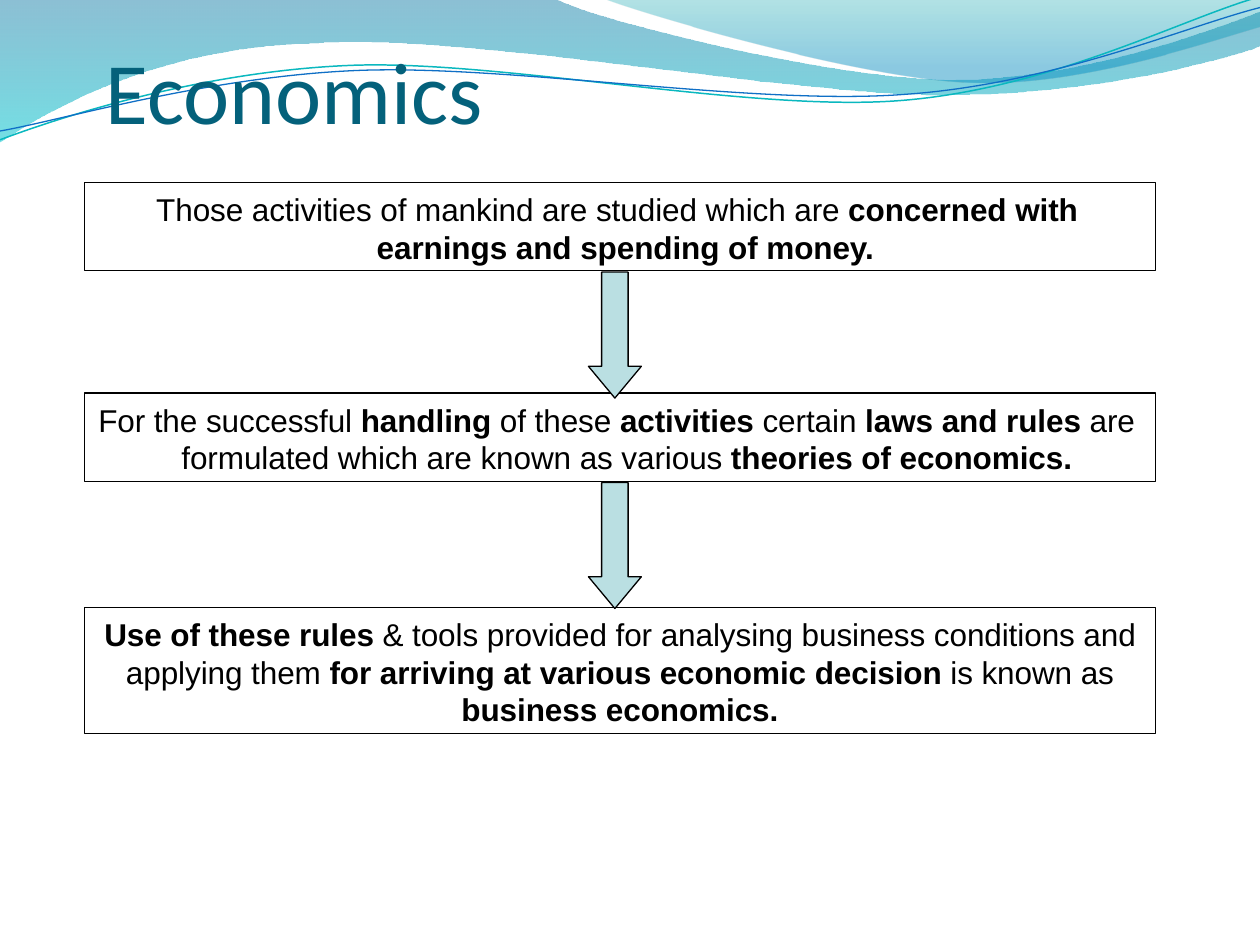
from lxml import etree
from pptx import Presentation
from pptx import util as u
from pptx.dml.color import RGBColor
from pptx.enum import shapes, text
from pptx.oxml.ns import qn

WIDTH, HEIGHT = 10, 7.5
TITLE = "Economics"
TITLE_PLACE = (0.84, 0.27, 5.09, 0.86)
BOX_LEFT, BOX_WIDTH = 0.67, 8.5
ARROW_LEFT, ARROW_WIDTH, ARROW_HEIGHT, ARROW_GAP = 4.67, 0.42, 1, 0.01

# Bold words stand between asterisks; first and hang are line starts from the box edge.
STEPS = [
    dict(top=1.455, height=0.7, first=0.57, hang=2.32, align="LEFT",
         words="Those activities of mankind are studied which are "
               "*concerned with earnings and spending of money.*"),
    dict(top=3.12, height=0.7, first=0.11, hang=0.77, align="LEFT",
         words="For the successful *handling* of these *activities* certain "
               "*laws and rules* are formulated which are known as various "
               "*theories of economics.*"),
    dict(top=4.82, height=1, first=0, hang=0, align="CENTER",
         words="*Use of these rules* & tools provided for analysing business "
               "conditions and applying them *for arriving at various economic "
               "decision* is known as *business economics.*"),
]
STEPS[0]["top"] = 1.45

# A wave is a start point, then line ends (x, y) or cubic curves (two handles and an end).
# A gradient stop is position, colour, opacity in percent.
WAVES = [
    dict(points=[(0, 0), (4.4, -0.01), (4.76, 0.17, 6.64, 0.63, 7.58, 0.63),
                 (8.53, 0.63, 9.58, 0.26, 10, 0.09), (10.01, 0.36),
                 (9.83, 0.44, 8.7, 0.76, 7.46, 0.75),
                 (6.22, 0.75, 3.82, 0.28, 2.57, 0.34),
                 (1.29, 0.36, 0.46, 0.83, -0.01, 1.13)],
         stops=[(0, "0074A1", 45), (1, "00C6CF", 55)]),
    dict(points=[(4.79, -0.01), (5.09, 0.11, 6.82, 0.62, 7.69, 0.65),
                 (8.56, 0.69, 9.61, 0.32, 10, 0.21), (10, 0)],
         stops=[(0, "00A1A9", 30), (0.8, "008BBF", 45)]),
    dict(points=[(0, 1.11), (0.48, 0.93, 1.58, 0.57, 2.77, 0.52),
                 (3.95, 0.47, 5.93, 0.89, 7.13, 0.8),
                 (8.33, 0.71, 9.38, 0.15, 9.98, -0.02)],
         line=("0AB8BF", 0.85)),
    dict(points=[(0, 1.04), (0.47, 0.96, 1.64, 0.61, 2.83, 0.56),
                 (4.03, 0.51, 5.97, 0.84, 7.17, 0.75),
                 (8.36, 0.67, 9.41, 0.21, 10, 0.06)],
         line=("0F6FC6", 0.75)),
]


def color(value):
    return RGBColor.from_string(value)


def assign(target, **values):
    for name, value in values.items():
        setattr(target, name, value)


def paint(shape, fill=None, line=None):
    """Set a solid fill and a (colour, points) line; None means no paint."""
    shape.shadow.inherit = False
    if fill:
        shape.fill.solid()
        shape.fill.fore_color.rgb = color(fill)
    else:
        shape.fill.background()
    if line:
        shape.line.color.rgb = color(line[0])
        shape.line.width = u.Pt(line[1])
    else:
        shape.line.fill.background()


def paint_gradient(shape, stops):
    shape.fill.gradient()
    shape.fill.gradient_angle = 270
    for stop, (position, value, _) in zip(shape.fill.gradient_stops, stops):
        stop.position = position
        stop.color.rgb = color(value)
    tones = shape._element.spPr.find(qn("a:gradFill")).iter(qn("a:srgbClr"))
    for tone, (_, _, opacity) in zip(tones, stops):
        etree.SubElement(tone, qn("a:alpha")).set("val", str(opacity * 1000))


def bend(wave, points):
    """Turn the straight segments that have handles into cubic curves."""
    segments = list(wave._element.spPr.iter(qn("a:lnTo")))
    for segment, part in zip(segments, points[1:]):
        if len(part) == 6:
            segment.tag = qn("a:cubicBezTo")
            for index in (0, 2):
                handle = etree.Element(qn("a:pt"))
                handle.set("x", str(u.Inches(part[index]) - wave.left))
                handle.set("y", str(u.Inches(part[index + 1]) - wave.top))
                segment.insert(index // 2, handle)


def add_wave(page, points, stops=None, line=None):
    ends = [tuple(map(u.Inches, part[-2:])) for part in points]
    builder = page.shapes.build_freeform(*ends[0], scale=1)
    builder.add_line_segments(ends[1:], close=bool(stops))
    wave = builder.convert_to_shape()
    bend(wave, points)
    paint(wave, line=line)
    if stops:
        paint_gradient(wave, stops)


def add_preset(page, kind, *place):
    return page.shapes.add_shape(kind, *map(u.Inches, place))


def set_frame(frame, anchor, top):
    assign(frame, word_wrap=True, auto_size=text.MSO_AUTO_SIZE.NONE,
           vertical_anchor=anchor, margin_left=0, margin_right=0,
           margin_top=u.Inches(top), margin_bottom=0)


def add_step(page, top, height, first, hang, align, words):
    box = add_preset(page, shapes.MSO_SHAPE.RECTANGLE, BOX_LEFT, top, BOX_WIDTH, height)
    paint(box, line=("000000", 0.75))
    set_frame(box.text_frame, text.MSO_ANCHOR.TOP, 0.06)
    para = box.text_frame.paragraphs[0]
    para.alignment = text.PP_ALIGN[align]
    layout = para._p.get_or_add_pPr()
    layout.set("marL", str(u.Inches(hang)))
    layout.set("indent", str(u.Inches(first - hang)))
    for index, words_part in enumerate(words.split("*")):
        if words_part:
            span = para.add_run()
            span.text = words_part
            assign(span.font, name="Arial", size=u.Pt(18), bold=index % 2 == 1)
            span.font.color.rgb = color("000000")
            span._r.get_or_add_rPr().set("spc", "-5")


def add_arrow(page, top):
    arrow = add_preset(page, shapes.MSO_SHAPE.DOWN_ARROW,
                       ARROW_LEFT, top, ARROW_WIDTH, ARROW_HEIGHT)
    arrow.adjustments[0], arrow.adjustments[1] = 0.5, 0.6
    paint(arrow, "BADFE2", ("000000", 0.75))


def set_title(page):
    title = page.shapes.title
    page.shapes._spTree.append(title._element)  # in front of the waves
    left, top, width, height = map(u.Inches, TITLE_PLACE)
    assign(title, left=left, top=top, width=width, height=height)
    title.text_frame.text = TITLE
    set_frame(title.text_frame, text.MSO_ANCHOR.BOTTOM, 0.01)
    para = title.text_frame.paragraphs[0]
    para.alignment = text.PP_ALIGN.LEFT
    assign(para.font, name="Calibri", size=u.Pt(50), bold=False)
    para.font.color.rgb = color("04617B")


def main():
    deck = Presentation()
    assign(deck, slide_width=u.Inches(WIDTH), slide_height=u.Inches(HEIGHT))
    page = deck.slides.add_slide(deck.slide_layouts[5])
    for wave in WAVES:
        add_wave(page, **wave)
    set_title(page)
    for step in STEPS:
        add_step(page, **step)
    for step in STEPS[:-1]:
        add_arrow(page, step["top"] + step["height"] + ARROW_GAP)
    deck.save("out.pptx")


if __name__ == "__main__":
    main()
